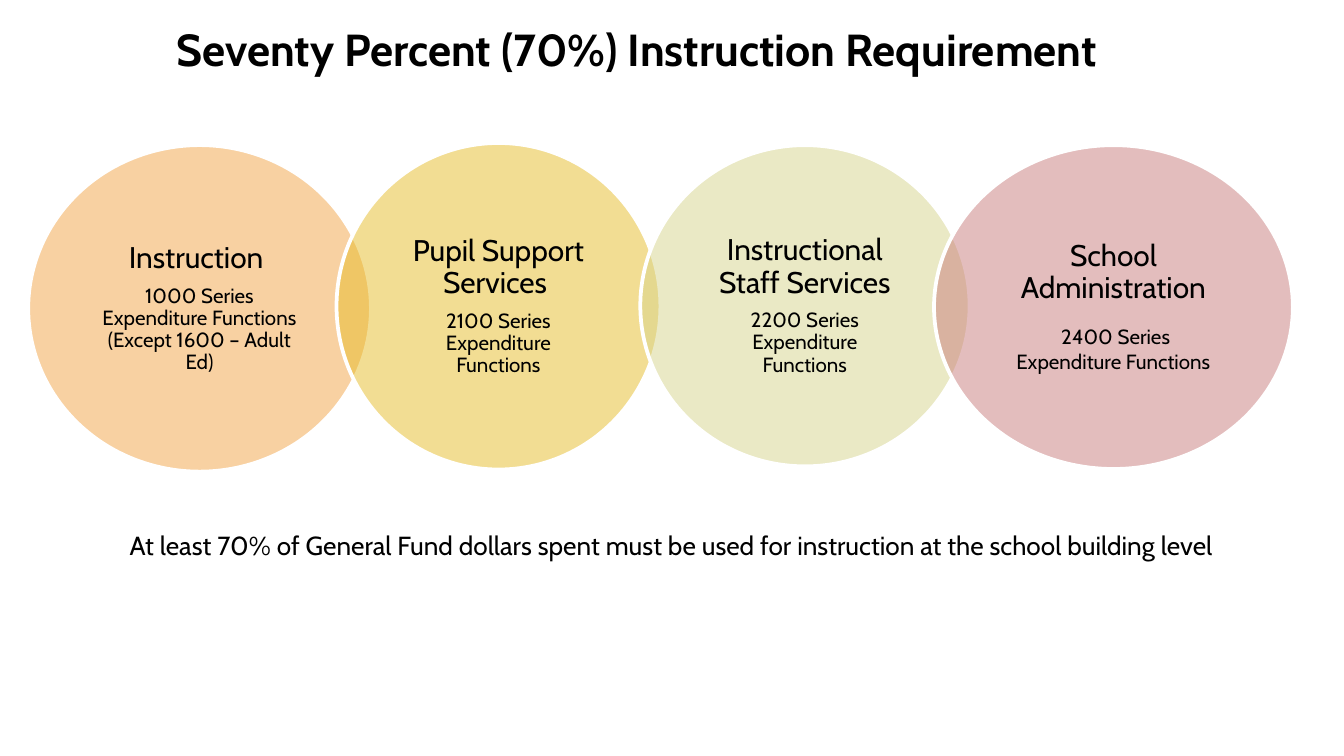
"""Build a slide of four linked circles on the instruction requirement."""
from dataclasses import dataclass

from lxml.etree import SubElement
from pptx import Presentation
from pptx.dml.color import RGBColor
from pptx.enum.shapes import MSO_SHAPE
from pptx.enum.text import MSO_ANCHOR, MSO_AUTO_SIZE, PP_ALIGN
from pptx.oxml.ns import qn
from pptx.util import Inches, Pt

COLS = 1000
ROWS = COLS * 9 / 16
WIDTH = Inches(10)
HEIGHT = WIDTH * 9 // 16
FONT = "Cabin"
INSET = 0.146
HEX = {
    "text": "000000",
    "edge": "FFFFFF",
    "orange": "F3A447",
    "gold": "E7BC29",
    "green": "D7D58D",
    "rose": "C97D7D",
}


@dataclass(frozen=True)
class Box:
    """Area in grid columns and rows."""
    col: float
    row: float
    wide: float
    high: float

    def inner(self) -> "Box":
        """Return the area that holds text within an ellipse."""
        return Box(self.col + self.wide * INSET, self.row + self.high * INSET,
                   self.wide * (1 - 2 * INSET), self.high * (1 - 2 * INSET))

    def place(self) -> tuple:
        """Return left, top, width and height as lengths."""
        return (int(WIDTH * self.col / COLS), int(HEIGHT * self.row / ROWS),
                int(WIDTH * self.wide / COLS), int(HEIGHT * self.high / ROWS))


@dataclass(frozen=True)
class Circle:
    """One group of expenditure functions."""
    box: Box
    color: str
    head: str
    body: str
    gap: float = 5.6
    pitch: float = 0.9


CIRCLES = (
    Circle(Box(21, 108, 255, 243), "orange", "Instruction ",
           "1000 Series Expenditure Functions (Except 1600 – Adult Ed)"),
    Circle(Box(250.4, 106.4, 241, 243), "gold", "Pupil Support Services ",
           "2100 Series Expenditure Functions"),
    Circle(Box(476.4, 108, 245, 239), "green", "Instructional Staff Services",
           "2200 Series Expenditure Functions"),
    Circle(Box(695, 108, 267, 241), "rose", "School Administration",
           " 2400 Series Expenditure Functions", gap=10, pitch=1.0),
)


def style(para, size: float, bold: bool = False) -> None:
    """Format every run of a paragraph."""
    for run in para.runs:
        run.font.name = FONT
        run.font.size = Pt(size)
        run.font.bold = bold
        run.font.color.rgb = RGBColor.from_string(HEX["text"])


def add_line(slide, box: Box, text: str, size: float, align,
             bold: bool = False, wrap: bool = True) -> None:
    """Add a text box with one paragraph."""
    frame = slide.shapes.add_textbox(*box.place()).text_frame
    frame.text = text
    frame.word_wrap = wrap
    frame.auto_size = MSO_AUTO_SIZE.SHAPE_TO_FIT_TEXT
    para = frame.paragraphs[0]
    para.alignment = align
    style(para, size, bold)


def add_circle(slide, item: Circle) -> None:
    """Add a half-transparent ellipse grouped with its label."""
    group = slide.shapes.add_group_shape().shapes
    disc = group.add_shape(MSO_SHAPE.OVAL, *item.box.place())
    disc.shadow.inherit = False
    disc.fill.solid()
    disc.fill.fore_color.rgb = RGBColor.from_string(HEX[item.color])
    tint = disc.fill._xPr.find(qn("a:solidFill"))[0]
    SubElement(tint, qn("a:alpha")).set("val", "50000")
    disc.line.color.rgb = RGBColor.from_string(HEX["edge"])
    disc.line.width = Pt(2)

    frame = group.add_textbox(*item.box.inner().place()).text_frame
    frame.word_wrap = True
    frame.vertical_anchor = MSO_ANCHOR.MIDDLE
    frame.margin_left = frame.margin_right = Inches(0.15)
    frame.margin_top = frame.margin_bottom = Inches(0.03)
    frame.text = f"{item.head}\n{item.body}"
    looks = ((16, item.gap, 0.9), (11, 3.9, item.pitch))
    for para, (size, gap, pitch) in zip(frame.paragraphs, looks):
        para.alignment = PP_ALIGN.CENTER
        para.line_spacing = pitch
        para.space_after = Pt(gap)
        style(para, size)


def main() -> None:
    """Draw the slide and save it."""
    deck = Presentation()
    deck.slide_width, deck.slide_height = WIDTH, HEIGHT
    slide = deck.slides.add_slide(deck.slide_layouts[6])
    add_line(slide, Box(121.4, 11, 789, 50),
             "Seventy Percent (70%) Instruction Requirement",
             24, PP_ALIGN.LEFT, bold=True, wrap=False)
    for item in CIRCLES:
        add_circle(slide, item)
    add_line(slide, Box(33.4, 389, 933, 34),
             "At least 70% of General Fund dollars spent must be used for "
             "instruction at the school building level", 14, PP_ALIGN.CENTER)
    deck.save("out.pptx")


if __name__ == "__main__":
    main()
